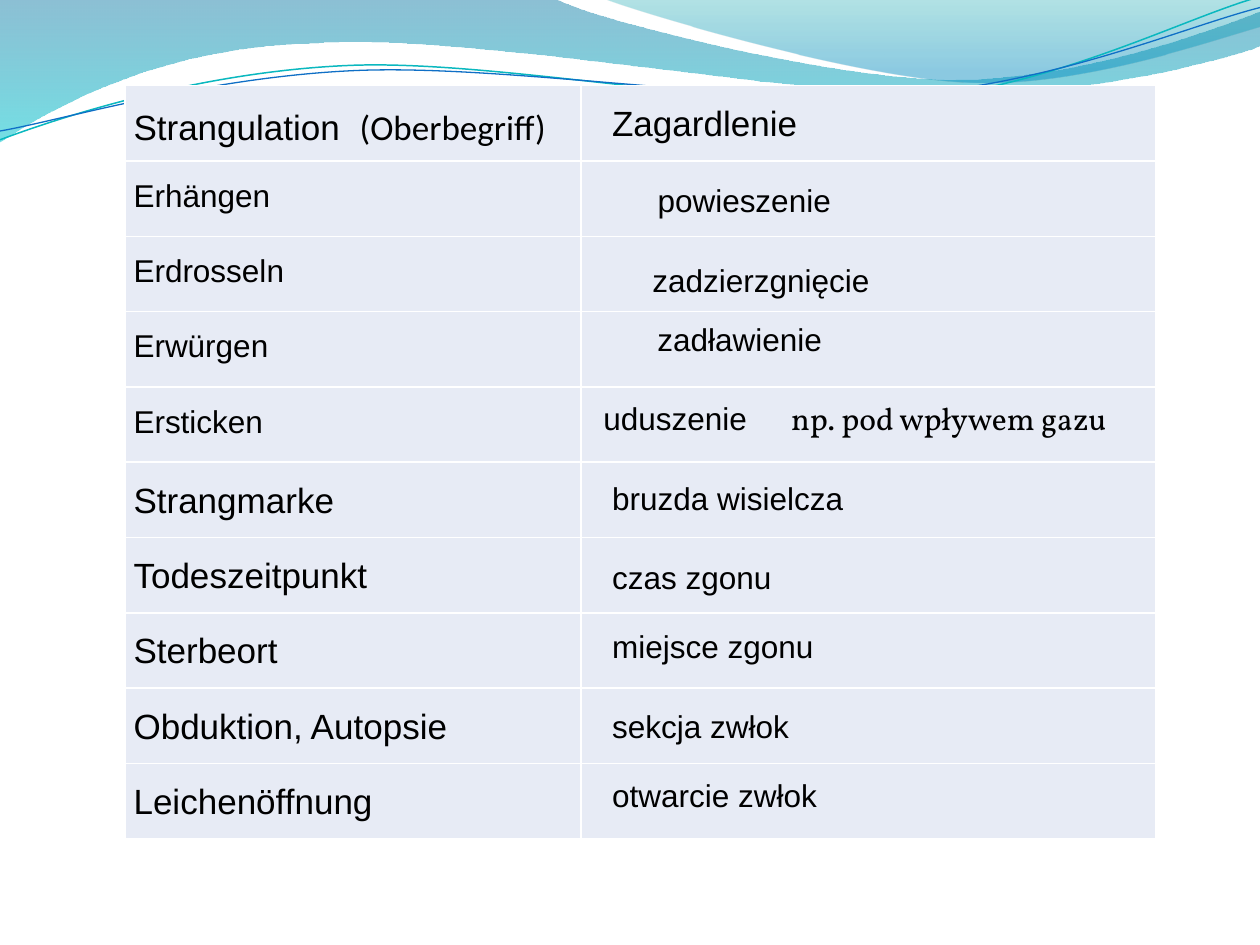
from dataclasses import dataclass
from typing import Optional

from lxml.etree import SubElement
from pptx import Presentation
from pptx.dml.color import RGBColor
from pptx.enum.text import MSO_AUTO_SIZE
from pptx.oxml.ns import qn
from pptx.util import Inches, Pt

BLACK, WHITE, CELL_FILL = "000000", "FFFFFF", "E7EBF5"


@dataclass
class Span:
    text: str
    size: float
    font: str = "Arial"


@dataclass
class Translation:
    left: float
    top: float
    spans: list[Span]
    width: float = 4.2
    tab: Optional[float] = None


@dataclass
class Stop:
    position: float
    color: str
    opacity: int


@dataclass
class Wave:
    # Each step holds one point (a line) or three points (a cubic curve).
    start: tuple
    steps: list[tuple]
    stops: Optional[list[Stop]] = None
    line: Optional[str] = None
    line_width: float = 0.75


def rgb(color: str) -> RGBColor:
    return RGBColor.from_string(color)


def bend_segments(shape, steps: list[tuple]) -> None:
    """Join each three segments that belong to a curve into one cubic curve."""
    segments = iter(list(shape.element.spPr.iter(qn("a:lnTo"))))
    for step in steps:
        first = next(segments)
        if len(step) == 2:
            continue
        first.tag = qn("a:cubicBezTo")
        for _ in range(2):
            segment = next(segments)
            first.append(segment[0])
            segment.getparent().remove(segment)


def draw_wave(page, wave: Wave) -> None:
    points = [(Inches(x), Inches(y)) for step in [wave.start, *wave.steps]
              for x, y in zip(step[::2], step[1::2])]
    builder = page.shapes.build_freeform(*points[0], scale=1.0)
    builder.add_line_segments(points[1:], close=wave.stops is not None)
    shape = builder.convert_to_shape()
    bend_segments(shape, wave.steps)
    shape.shadow.inherit = False
    if wave.stops:
        shape.fill.gradient()
        shape.fill.gradient_angle = 270
        for target, stop in zip(shape.fill.gradient_stops, wave.stops):
            target.position = stop.position
            target.color.rgb = rgb(stop.color)
        colors = shape.element.spPr.iter(qn("a:srgbClr"))
        for color, stop in zip(list(colors), wave.stops):
            SubElement(color, qn("a:alpha"), val=str(stop.opacity * 1000))
    else:
        shape.fill.background()
    if wave.line:
        shape.line.color.rgb = rgb(wave.line)
        shape.line.width = Pt(wave.line_width)
    else:
        shape.line.fill.background()


def write_spans(para, spans: list[Span], tab: Optional[float] = None) -> None:
    for span in spans:
        run = para.add_run()
        run.text = span.text
        run.font.size = Pt(span.size)
        run.font.name = span.font
        run.font.color.rgb = rgb(BLACK)
    if tab is not None:
        tabs = SubElement(para._p.get_or_add_pPr(), qn("a:tabLst"))
        SubElement(tabs, qn("a:tab"), pos=str(Inches(tab)), algn="l")


def style_cell(cell) -> None:
    cell.margin_left = cell.margin_right = Inches(0.07)
    cell.margin_top = cell.margin_bottom = 0
    properties = cell._tc.get_or_add_tcPr()
    for side in ("a:lnL", "a:lnR", "a:lnT", "a:lnB"):
        border = SubElement(properties, qn(side), w=str(Pt(1)))
        SubElement(SubElement(border, qn("a:solidFill")), qn("a:srgbClr"), val=WHITE)
    cell.fill.solid()
    cell.fill.fore_color.rgb = rgb(CELL_FILL)


def draw_terms(page, terms: list[list[Span]]) -> None:
    frame = page.shapes.add_table(len(terms), 2, Inches(0.99), Inches(0.68),
                                  Inches(8.18), Inches(5.98))
    table = frame.table
    table.first_row = table.horz_banding = False
    table.columns[0].width, table.columns[1].width = Inches(3.62), Inches(4.56)
    for row, spans in enumerate(terms):
        for column in range(2):
            style_cell(table.cell(row, column))
        para = table.cell(row, 0).text_frame.paragraphs[0]
        para.line_spacing = 1.5
        write_spans(para, spans)


def draw_translation(page, item: Translation) -> None:
    height = 0.44 if item.spans[0].size == 20 else 0.4
    box = page.shapes.add_textbox(Inches(item.left), Inches(item.top),
                                  Inches(item.width), Inches(height))
    box.text_frame.word_wrap = True
    box.text_frame.auto_size = MSO_AUTO_SIZE.SHAPE_TO_FIT_TEXT
    write_spans(box.text_frame.paragraphs[0], item.spans, item.tab)


WAVES = [
    Wave((0, 0), [(4.4, -0.01), (4.76, 0.17, 6.64, 0.63, 7.58, 0.63),
                  (8.53, 0.63, 9.58, 0.26, 10, 0.09), (10.01, 0.36),
                  (9.83, 0.44, 8.7, 0.76, 7.46, 0.75), (6.22, 0.75, 3.82, 0.28, 2.57, 0.34),
                  (1.29, 0.36, 0.46, 0.83, -0.01, 1.13)],
         stops=[Stop(0, "0074A1", 45), Stop(1, "00C6CF", 55)]),
    Wave((4.79, -0.01), [(5.09, 0.11, 6.82, 0.62, 7.69, 0.65),
                         (8.56, 0.69, 9.61, 0.32, 10, 0.21), (10, 0)],
         stops=[Stop(0, "00A1A9", 30), Stop(0.8, "008BBF", 45)]),
    Wave((0, 1.11), [(0.48, 0.93, 1.58, 0.57, 2.77, 0.52), (3.95, 0.47, 5.93, 0.89, 7.13, 0.8),
                     (8.33, 0.71, 9.38, 0.15, 9.98, -0.02)], line="0AB8BF", line_width=0.85),
    Wave((0, 1.04), [(0.47, 0.96, 1.64, 0.61, 2.83, 0.56), (4.03, 0.51, 5.97, 0.84, 7.17, 0.75),
                     (8.36, 0.67, 9.41, 0.21, 10, 0.06)], line="0F6FC6"),
]

TERMS = [
    [Span("Strangulation  ", 20), Span("(Oberbegriff)", 20, "Calibri")],
    *([Span(word, 18)] for word in ("Erhängen", "Erdrosseln", "Erwürgen", "Ersticken")),
    *([Span(word, 20)] for word in ("Strangmarke", "Todeszeitpunkt", "Sterbeort",
                                    "Obduktion, Autopsie", "Leichenöffnung")),
]

TRANSLATIONS = [
    Translation(4.76, 0.76, [Span("Zagardlenie", 20)]),
    Translation(5.12, 1.39, [Span("powieszenie", 18)], width=1.85),
    Translation(5.08, 2.02, [Span("zadzierzgnięcie", 18)], width=2.76),
    Translation(5.12, 2.49, [Span("zadławienie", 18)], width=3.5),
    Translation(4.69, 3.12, [Span("uduszenie\t", 18), Span("np. pod wpływem gazu", 18, "Vollkorn")],
                width=4.41, tab=1.49),
    Translation(4.76, 3.75, [Span("bruzda wisielcza", 18)], width=3.31),
    Translation(4.76, 4.38, [Span("czas zgonu", 18)]),
    Translation(4.76, 4.93, [Span("miejsce zgonu", 18)]),
    Translation(4.76, 5.56, [Span("sekcja zwłok", 18)]),
    Translation(4.76, 6.11, [Span("otwarcie zwłok", 18)]),
]


def main() -> None:
    deck = Presentation()
    deck.slide_width, deck.slide_height = Inches(10), Inches(7.5)
    page = deck.slides.add_slide(deck.slide_layouts[6])
    page.background.fill.solid()
    page.background.fill.fore_color.rgb = rgb(WHITE)

    # Wave band along the top
    for wave in WAVES:
        draw_wave(page, wave)

    # German terms, then the Polish translations over the second column
    draw_terms(page, TERMS)
    for item in TRANSLATIONS:
        draw_translation(page, item)

    deck.save("out.pptx")


if __name__ == "__main__":
    main()
